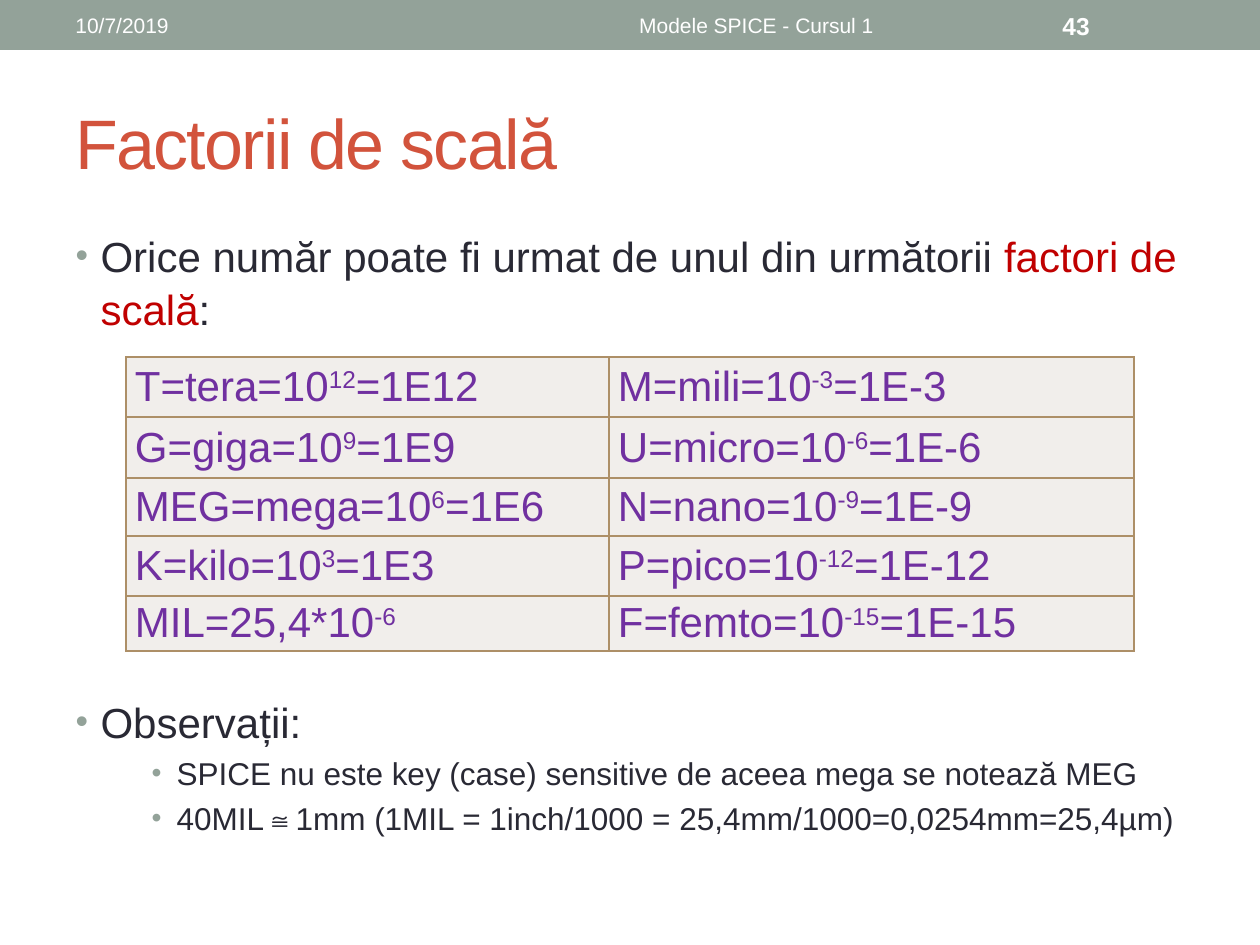
"""Slide on SPICE scale factors: a header band, a table of factors and remarks."""
from lxml import etree
from pptx import Presentation
from pptx.dml.color import RGBColor
from pptx.enum.shapes import MSO_SHAPE
from pptx.enum.text import MSO_ANCHOR, MSO_AUTO_SIZE, PP_ALIGN
from pptx.oxml.ns import qn
from pptx.util import Emu, Pt

RECTANGLE = MSO_SHAPE.RECTANGLE
MIDDLE, TOP = MSO_ANCHOR.MIDDLE, MSO_ANCHOR.TOP
LEFT, CENTER, JUSTIFY = PP_ALIGN.LEFT, PP_ALIGN.CENTER, PP_ALIGN.JUSTIFY
NO_AUTOFIT = MSO_AUTO_SIZE.NONE

SAGE = RGBColor(0x93, 0xA2, 0x99)
RUST = RGBColor(0xD2, 0x53, 0x3C)
INK = RGBColor(0x29, 0x29, 0x34)
RED = RGBColor(0xC0, 0x00, 0x00)
PURPLE = RGBColor(0x70, 0x30, 0xA0)
CREAM = RGBColor(0xF1, 0xEE, 0xEB)
TAN = RGBColor(0xAD, 0x8F, 0x67)
WHITE = RGBColor(0xFF, 0xFF, 0xFF)


def px(*lengths):
    return [Emu(round(length * 914400 / 126)) for length in lengths]


def add_run(paragraph, text, size, color, bold=False):
    run = paragraph.add_run()
    run.text = text
    run.font.name = "Arial"
    run.font.size = Pt(size)
    run.font.bold = bold
    run.font.color.rgb = color
    return run


prs = Presentation()
prs.slide_width, prs.slide_height = px(1260, 945)
slide = prs.slides.add_slide(prs.slide_layouts[1])

band = slide.shapes.add_shape(RECTANGLE, *px(0, 0, 1260, 50))
band.shadow.inherit = False
band.fill.solid()
band.fill.fore_color.rgb = SAGE
band.line.fill.background()

for text, left, width, align, size, bold in [
    ("10/7/2019", 63, 399, LEFT, 12, False),
    ("Modele SPICE - Cursul 1", 473, 567, CENTER, 12, False),
    ("43", 1050, 147, LEFT, 14, True),
]:
    header = slide.shapes.add_textbox(*px(left, 3, width, 45)).text_frame
    header.word_wrap = True
    header.vertical_anchor = MIDDLE
    header.paragraphs[0].alignment = align
    add_run(header.paragraphs[0], text, size, WHITE, bold)

title = slide.shapes.title
title.left, title.top, title.width, title.height = px(63, 73, 1134, 136)
title.text_frame.auto_size = NO_AUTOFIT
title.text_frame.vertical_anchor = MIDDLE
heading = title.text_frame.paragraphs[0]
heading.alignment = LEFT
heading_run = add_run(heading, "Factorii de scală", 40, RUST)
heading_run.font._element.set("spc", "-100")

body = slide.placeholders[1]
body.left, body.top, body.width, body.height = px(63, 221, 1134, 640)
body.text_frame.auto_size = NO_AUTOFIT
body.text_frame.vertical_anchor = TOP
remarks = [
    (0, 24, 0, 1.06, [("Orice număr poate fi urmat de unul din următorii ", INK),
                      ("factori de scală", RED), (":", INK)]),
    (0, 24, 207, 1, [("Observații:", INK)]),
    (2, 18, 4, 1, [("SPICE nu este key (case) sensitive de aceea mega se notează MEG", INK)]),
    (2, 18, 4, 1, [("40MIL≅1mm (1MIL = 1inch/1000 = 25,4mm/1000=0,0254mm=25,4µm)", INK)]),
]
for index, (level, size, before, spacing, parts) in enumerate(remarks):
    remark = body.text_frame.add_paragraph() if index else body.text_frame.paragraphs[0]
    remark.level = level
    remark.space_before = Pt(before)
    remark.line_spacing = spacing
    hanging, step = px(25, 38)
    properties = remark._p.get_or_add_pPr()
    properties.set("marL", str(hanging + level * step))
    properties.set("indent", str(-hanging))
    bullet_color = etree.SubElement(properties, qn("a:buClr"))
    etree.SubElement(bullet_color, qn("a:srgbClr"), val=str(SAGE))
    etree.SubElement(properties, qn("a:buSzPct"), val="90000" if level else "85000")
    etree.SubElement(properties, qn("a:buFont"), typeface="Arial")
    etree.SubElement(properties, qn("a:buChar"), char="•")
    for text, color in parts:
        add_run(remark, text, size, color)

factors = [
    [("T=tera=10", "12", "=1E12"), ("M=mili=10", "-3", "=1E-3")],
    [("G=giga=10", "9", "=1E9"), ("U=micro=10", "-6", "=1E-6")],
    [("MEG=mega=10", "6", "=1E6"), ("N=nano=10", "-9", "=1E-9")],
    [("K=kilo=10", "3", "=1E3"), ("P=pico=10", "-12", "=1E-12")],
    [("MIL=25,4*10", "-6", ""), ("F=femto=10", "-15", "=1E-15")],
]
table = slide.shapes.add_table(5, 2, *px(126, 357, 1008, 294)).table
table.first_row = False
table.horz_banding = False
for column, width in zip(table.columns, px(483, 525)):
    column.width = width
for row, height in zip(table.rows, px(60, 61, 58, 60, 55)):
    row.height = height

for row, row_factors in zip(table.rows, factors):
    for cell, (base, exponent, value) in zip(row.cells, row_factors):
        cell.vertical_anchor = MIDDLE
        cell.margin_left, cell.margin_right, cell.margin_top, cell.margin_bottom = px(9, 9, 0, 0)
        for side in ("a:lnL", "a:lnR", "a:lnT", "a:lnB"):
            border = etree.SubElement(cell._tc.get_or_add_tcPr(), qn(side), w=str(Pt(1)))
            border_fill = etree.SubElement(border, qn("a:solidFill"))
            etree.SubElement(border_fill, qn("a:srgbClr"), val=str(TAN))
        cell.fill.solid()
        cell.fill.fore_color.rgb = CREAM
        factor = cell.text_frame.paragraphs[0]
        factor.alignment = JUSTIFY
        add_run(factor, base, 24, PURPLE)
        add_run(factor, exponent, 24, PURPLE).font._element.set("baseline", "30000")
        if value:
            add_run(factor, value, 24, PURPLE)

prs.save("out.pptx")
